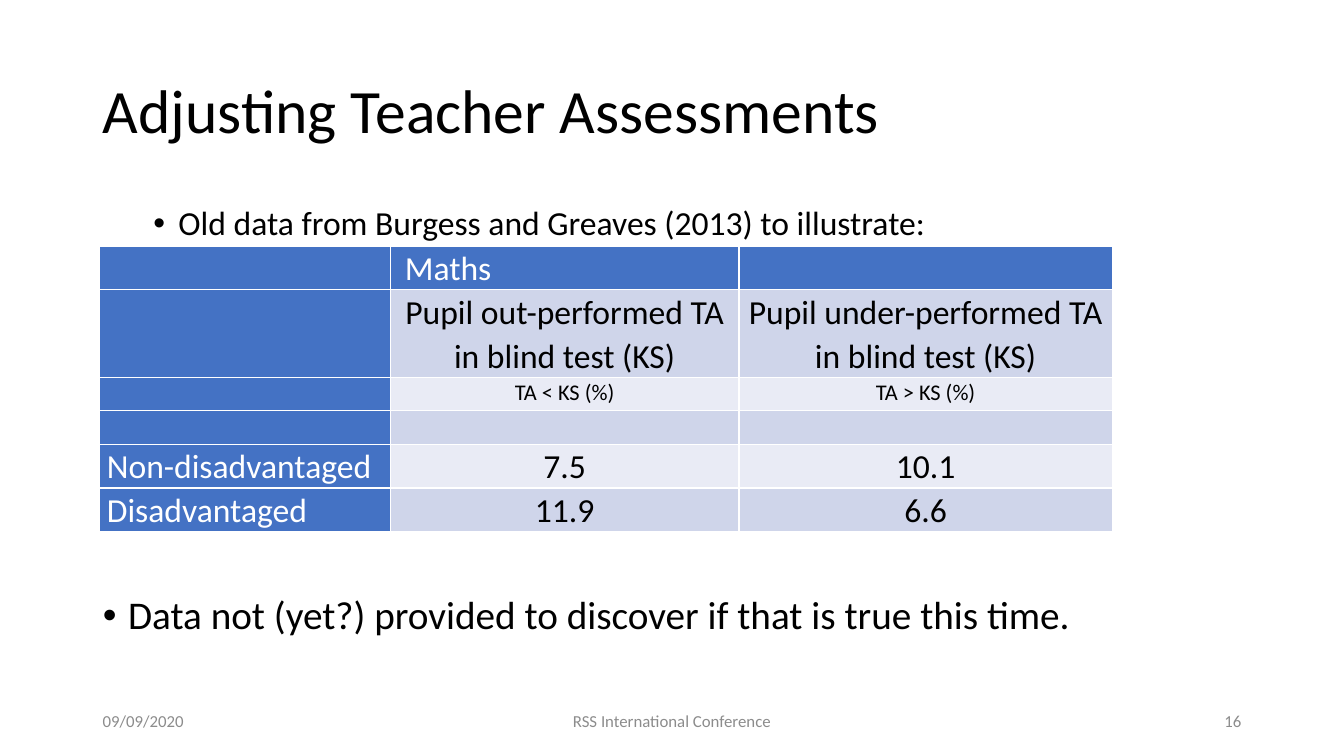
from lxml import etree
from pptx import Presentation, util as u
from pptx.dml import color
from pptx.enum import text
from pptx.oxml import ns

WIDTH, HEIGHT = 13.33, 7.5
MARGIN = 0.92
FONT = "Calibri"
BLACK, WHITE, GREY = "000000", "FFFFFF", "8C8C8C"
BLUE, BANDS = "4472C4", ("E9EBF5", "CFD5EA")
LEFT, CENTER, RIGHT = text.PP_ALIGN.LEFT, text.PP_ALIGN.CENTER, text.PP_ALIGN.RIGHT
MIDDLE, TOP = text.MSO_ANCHOR.MIDDLE, text.MSO_ANCHOR.TOP

COLUMNS = (2.88, 3.46, 3.7)
ROWS = (
    (0.43, 24, ("", " Maths", "")),
    (0.86, 24, ("", "Pupil out-performed TA in blind test (KS)",
                "Pupil under-performed TA in blind test (KS)")),
    (0.33, 16, ("", "TA < KS (%)", "TA > KS (%)")),
    (0.33, 16, ("", "", "")),
    (0.43, 24, ("Non-disadvantaged", "7.5", "10.1")),
    (0.43, 24, ("Disadvantaged", "11.9", "6.6")),
)


def rgb(value):
    return color.RGBColor.from_string(value)


def apply(target, values):
    for name, value in values.items():
        setattr(target, name, value)


def place(shape, box):
    apply(shape, dict(zip(("left", "top", "width", "height"), map(u.Inches, box))))


def write(paragraph, words, size, ink=BLACK, **layout):
    apply(paragraph, layout)
    apply(paragraph.font, {"size": u.Pt(size), "name": FONT, "bold": False})
    paragraph.font.color.rgb = rgb(ink)
    if words:
        run = paragraph.add_run()
        run.text = words
        apply(run.font, {"size": u.Pt(size), "name": FONT, "bold": False})
        run.font.color.rgb = rgb(ink)


def add_bullet(paragraph, indent):
    properties = paragraph._p.get_or_add_pPr()
    properties.set("marL", str(u.Inches(indent)))
    properties.set("indent", str(u.Inches(-0.25)))
    font = etree.SubElement(properties, ns.qn("a:buFont"))
    font.set("typeface", "Arial")
    etree.SubElement(properties, ns.qn("a:buChar")).set("char", "•")
    defaults = properties.find(ns.qn("a:defRPr"))
    if defaults is not None:
        properties.append(defaults)


def fill_title(shape, box):
    place(shape, box)
    frame = shape.text_frame
    apply(frame, {"vertical_anchor": MIDDLE, "word_wrap": True,
                  "auto_size": text.MSO_AUTO_SIZE.NONE})
    write(frame.paragraphs[0], "Adjusting Teacher Assessments", 44,
          alignment=LEFT, line_spacing=0.9)


def fill_body(shape, box):
    place(shape, box)
    frame = shape.text_frame
    apply(frame, {"vertical_anchor": TOP, "word_wrap": True,
                  "auto_size": text.MSO_AUTO_SIZE.NONE})
    points = (
        ("Old data from Burgess and Greaves (2013) to illustrate:", 24, 1, 0.75, 5),
        ("Data not (yet?) provided to discover if that is true this time.",
         28, 0, 0.25, 252),
    )
    for index, (words, size, level, indent, gap) in enumerate(points):
        paragraph = frame.add_paragraph() if index else frame.paragraphs[0]
        write(paragraph, words, size, level=level, line_spacing=0.9,
              space_before=u.Pt(gap))
        add_bullet(paragraph, indent)


def add_borders(cell):
    properties = cell._tc.get_or_add_tcPr()
    for index, side in enumerate(("lnL", "lnR", "lnT", "lnB")):
        line = etree.Element(ns.qn("a:" + side), w=str(u.Pt(1)))
        paint = etree.SubElement(line, ns.qn("a:solidFill"))
        etree.SubElement(paint, ns.qn("a:srgbClr")).set("val", WHITE)
        properties.insert(index, line)


def add_results(slide, left, top):
    height = sum(row[0] for row in ROWS)
    frame = slide.shapes.add_table(len(ROWS), len(COLUMNS), *map(
        u.Inches, (left, top, sum(COLUMNS), height)))
    table = frame.table
    for column, width in zip(table.columns, COLUMNS):
        column.width = u.Inches(width)
    for row, (row_height, size, words) in enumerate(ROWS):
        table.rows[row].height = u.Inches(row_height)
        for column, label in enumerate(words):
            cell = table.cell(row, column)
            heading = row == 0 or column == 0
            number = row > 3 and column > 0
            apply(cell, {"margin_left": u.Inches(0.07), "margin_right": u.Inches(0.07),
                         "margin_top": 0, "margin_bottom": 0,
                         "vertical_anchor": MIDDLE if number else TOP})
            cell.fill.solid()
            cell.fill.fore_color.rgb = rgb(BLUE if heading else BANDS[row % 2])
            add_borders(cell)
            write(cell.text_frame.paragraphs[0], label, size,
                  WHITE if heading else BLACK,
                  alignment=LEFT if heading else CENTER, line_spacing=1.07)


def add_footer(slide, top, height):
    parts = (
        ("09/09/2020", MARGIN, 3, LEFT),
        ("RSS International Conference", (WIDTH - 4.5) / 2, 4.5, CENTER),
        ("16", WIDTH - MARGIN - 3, 3, RIGHT),
    )
    for words, left, width, alignment in parts:
        box = slide.shapes.add_textbox(*map(u.Inches, (left, top, width, height)))
        apply(box.text_frame, {"word_wrap": True, "vertical_anchor": MIDDLE})
        write(box.text_frame.paragraphs[0], words, 12, GREY, alignment=alignment)


def main():
    presentation = Presentation()
    apply(presentation, {"slide_width": u.Inches(WIDTH),
                         "slide_height": u.Inches(HEIGHT)})
    slide = presentation.slides.add_slide(presentation.slide_layouts[1])
    content_width = WIDTH - 2 * MARGIN
    fill_title(slide.shapes.title, (MARGIN, 0.4, content_width, 1.45))
    fill_body(slide.placeholders[1], (MARGIN, 2, content_width, 4.76))
    add_results(slide, 0.99, 2.44)
    add_footer(slide, 6.95, 0.4)
    presentation.save("out.pptx")


if __name__ == "__main__":
    main()
